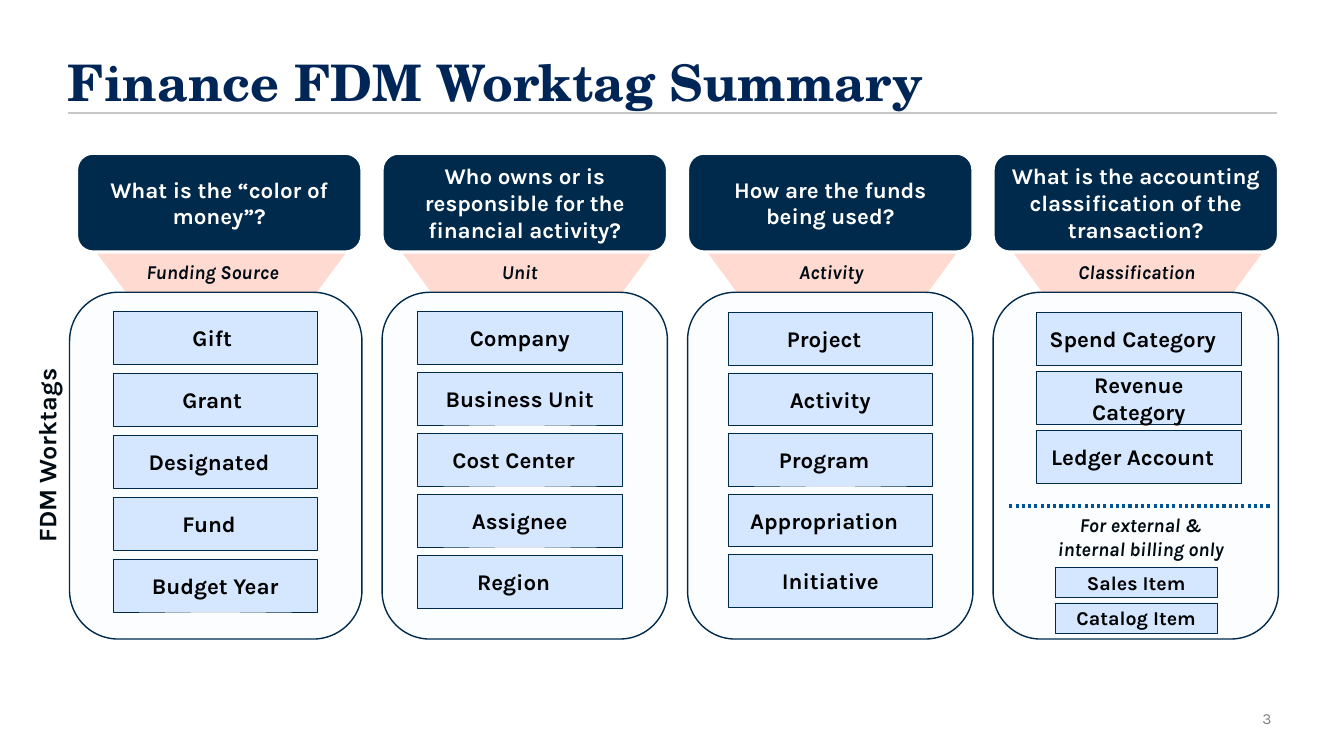
from lxml.etree import SubElement
from pptx import Presentation
from pptx.dml.color import RGBColor
from pptx.enum.dml import MSO_LINE
from pptx.enum.shapes import MSO_CONNECTOR, MSO_SHAPE
from pptx.enum.text import MSO_ANCHOR, MSO_AUTO_SIZE, PP_ALIGN
from pptx.oxml.ns import qn
from pptx.util import Inches, Pt

NAVY, INK, PALE_BLUE = "002A4B", "000B14", "D5E7FF"
GRID_LEFT, COLUMN_PITCH, COLUMN_WIDTH = 0.76, 3.03, 2.83
TAG_WIDTH, TAG_HEIGHT = 2.03, 0.52
LABEL_WIDTH, LABEL_HEIGHT = 1.77, 0.35

# Each column: question, label, label inset, panel offset, tag offset, first tag top, tag pitch, tags
COLUMNS = [
    ("What is the “color of money”?", "Funding Source", 0.49, -0.07, 0.36, 3.09, 0.615,
     ["Gift", "Grant", "Designated", "Fund", "Budget Year"]),
    ("Who owns or is responsible for the financial activity?", "Unit", 0.48, 0, 0.35, 3.09, 0.605,
     ["Company", "Business Unit", "Cost Center", "Assignee", "Region"]),
    ("How are the funds being used?", "Activity", 0.54, 0, 0.4, 3.1, 0.6,
     ["Project", "Activity", "Program", "Appropriation", "Initiative"]),
    ("What is the accounting classification of the transaction?", "Classification", 0.54, 0, 0.43,
     3.1, 0.585, ["Spend Category", "Revenue Category", "Ledger Account"]),
]
RIGHT_PADDING = {
    "Funding Source": 0.05, "Gift": 0.06, "Grant": 0.06, "Designated": 0.12, "Fund": 0.12,
    "Cost Center": 0.12, "Region": 0.12, "Project": 0.12, "Program": 0.12,
    "Appropriation": 0.12, "Spend Category": 0.12, "Ledger Account": 0.12,
}


def color(hex_string):
    """Turn a hex string into a colour."""
    return RGBColor.from_string(hex_string)


def write(shape, text, size=16, fill="000000", bold=True, italic=False, font="Karla",
          align=PP_ALIGN.CENTER, anchor=MSO_ANCHOR.MIDDLE, fit=MSO_AUTO_SIZE.NONE,
          left_inset=0.1, spacing=None):
    """Put formatted text into a shape."""
    frame = shape.text_frame
    frame.word_wrap = True
    frame.auto_size = fit
    frame.vertical_anchor = anchor
    frame.margin_left = Inches(left_inset)
    frame.margin_right = Inches(0.1 + RIGHT_PADDING.get(text, 0))
    frame.margin_top = frame.margin_bottom = Inches(0.05)
    paragraph = frame.paragraphs[0]
    paragraph.alignment = align
    paragraph.line_spacing = spacing
    run = paragraph.add_run()
    run.text = text
    run.font.name, run.font.size = font, Pt(size)
    run.font.bold, run.font.italic = bold, italic
    run.font.color.rgb = color(fill)


def block(slide, kind, area, fill, outline=None, weight=1.0):
    """Add a filled preset shape, outlined if a colour is given."""
    shape = slide.shapes.add_shape(kind, *map(Inches, area))
    shape.shadow.inherit = False
    shape.fill.solid()
    shape.fill.fore_color.rgb = color(fill)
    if outline:
        shape.line.color.rgb = color(outline)
        shape.line.width = Pt(weight)
    else:
        shape.line.fill.background()
    return shape


def caption(slide, text, area, rotation=0, **text_format):
    """Add a free-standing text box."""
    box = slide.shapes.add_textbox(*map(Inches, area))
    box.rotation = rotation
    write(box, text, fit=MSO_AUTO_SIZE.SHAPE_TO_FIT_TEXT, **text_format)


def rule(slide, left, right, top, stroke, weight, dash=None):
    """Draw a horizontal line."""
    line = slide.shapes.add_connector(MSO_CONNECTOR.STRAIGHT, *map(Inches, (left, top, right, top)))
    line.line.color.rgb = color(stroke)
    line.line.width = Pt(weight)
    if dash:
        line.line.dash_style = dash
    SubElement(line._element.spPr, qn("a:effectLst"))


def tag(slide, text, area, size=16):
    """Add a worktag box."""
    write(block(slide, MSO_SHAPE.RECTANGLE, area, PALE_BLUE, NAVY, 0.25), text, size=size)


def worktag_column(slide, index, question, label, label_offset, panel_offset, tag_offset,
                   first_top, pitch, tags):
    """Add a question with its funnel, label, panel and worktags."""
    left = GRID_LEFT + index * COLUMN_PITCH
    funnel = block(slide, MSO_SHAPE.ISOSCELES_TRIANGLE, (left + 0.15, 2.44, 2.57, 1.75), "FFDAD0")
    funnel.rotation = 180
    block(slide, MSO_SHAPE.ROUNDED_RECTANGLE,
          (left + panel_offset, 2.9, COLUMN_WIDTH - panel_offset, 3.44), "FBFDFF", NAVY)
    caption(slide, label, (left + label_offset, 2.52, LABEL_WIDTH, LABEL_HEIGHT),
            size=14, fill=INK, italic=True)
    header = block(slide, MSO_SHAPE.ROUNDED_RECTANGLE, (left, 1.52, COLUMN_WIDTH, 0.98),
                   NAVY, "FFFFFF", 2.25)
    write(header, question, fill="FFFFFF")
    for row, name in enumerate(tags):
        tag(slide, name, (left + tag_offset, first_top + row * pitch, TAG_WIDTH, TAG_HEIGHT))


def billing_section(slide):
    """Add the billing-only worktags under a dotted line."""
    left = GRID_LEFT + 3 * COLUMN_PITCH
    rule(slide, left + 0.16, left + 2.76, 5.02, "005496", 2.25, MSO_LINE.ROUND_DOT)
    for row, name in enumerate(["Sales Item", "Catalog Item"]):
        tag(slide, name, (left + 0.62, 5.63 + row * 0.35, 1.6, 0.3), size=14)
    caption(slide, "For external & internal billing only", (left + 0.45, 5.04, TAG_WIDTH, 0.57),
            size=14, fill=INK, italic=True)


def heading(slide):
    """Fill the title placeholder and underline it."""
    title = slide.shapes.title
    title.left, title.top, title.width, title.height = map(Inches, (0.67, 0.6, 12, 0.49))
    write(title, "Finance FDM Worktag Summary", size=36, fill="002657", font="TeX Gyre Schola",
          align=PP_ALIGN.LEFT, left_inset=0, spacing=0.9)
    rule(slide, 0.67, 12.67, 1.12, "C7C9C8", 1)


def main():
    """Build and save the slide."""
    deck = Presentation()
    deck.slide_width, deck.slide_height = Inches(13.33), Inches(7.5)
    slide = deck.slides.add_slide(deck.slide_layouts[5])
    heading(slide)
    for index, column in enumerate(COLUMNS):
        worktag_column(slide, index, *column)
    billing_section(slide)
    caption(slide, "FDM Worktags", (-0.63, 4.32, 2.18, 0.4), rotation=270,
            size=18, fill=INK, anchor=MSO_ANCHOR.TOP)
    caption(slide, "3", (11.9, 6.99, 0.81, 0.29), size=11, fill="808080", bold=False,
            align=PP_ALIGN.RIGHT, anchor=MSO_ANCHOR.TOP)
    deck.save("out.pptx")


if __name__ == "__main__":
    main()
